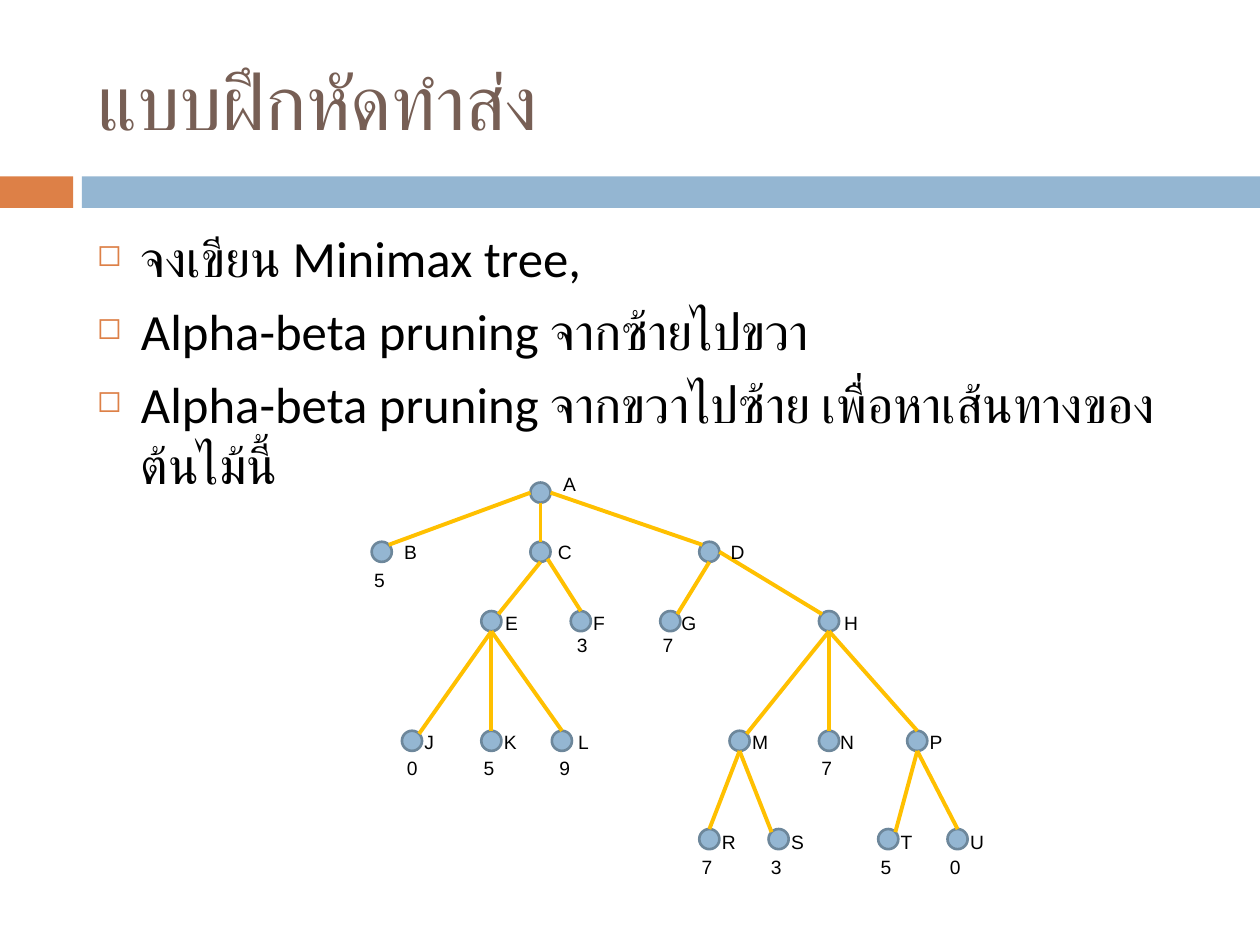
from lxml.etree import SubElement
from pptx import Presentation
from pptx.dml.color import RGBColor
from pptx.enum.shapes import MSO_CONNECTOR as Line, MSO_SHAPE as Shape
from pptx.enum.text import MSO_ANCHOR as Anchor, PP_ALIGN as Align
from pptx.oxml.ns import qn
from pptx.util import Inches, Pt

HEADING = "แบบฝึกหัดทำส่ง"
TASKS = [
    "จงเขียน Minimax tree,",
    "Alpha-beta pruning จากซ้ายไปขวา",
    "Alpha-beta pruning จากขวาไปซ้าย เพื่อหาเส้นทางของต้นไม้นี้",
]
# level: node top, name top, value top
LEVELS = [
    (3.83, 3.70, None),
    (4.30, 4.24, 4.46),
    (4.85, 4.80, 4.98),
    (5.80, 5.75, 5.95),
    (6.58, 6.54, 6.74),
]
# name, left, level, name offset, value, value offset
NODES = [
    ("A", 4.21, 0, 0.16, None, 0),
    ("B", 2.95, 1, 0.16, "5", -0.08),
    ("C", 4.21, 1, 0.12, None, 0),
    ("D", 5.55, 1, 0.15, None, 0),
    ("E", 3.82, 2, 0.09, None, 0),
    ("F", 4.53, 2, 0.08, "3", -0.05),
    ("G", 5.24, 2, 0.07, "7", -0.08),
    ("H", 6.50, 2, 0.10, None, 0),
    ("J", 3.19, 3, 0.08, "0", -0.06),
    ("K", 3.82, 3, 0.08, "5", -0.08),
    ("L", 4.38, 3, 0.11, "9", -0.04),
    ("M", 5.79, 3, 0.08, None, 0),
    ("N", 6.50, 3, 0.07, "7", -0.08),
    ("P", 7.20, 3, 0.08, None, 0),
    ("R", 5.55, 4, 0.08, "7", -0.08),
    ("S", 6.10, 4, 0.08, "3", -0.08),
    ("T", 6.97, 4, 0.08, "5", -0.08),
    ("U", 7.52, 4, 0.08, "0", -0.08),
]
BRANCHES = [
    ("A", "left", "B", "top right"),
    ("A", "bottom", "C", "top"),
    ("A", "right", "D", "top left"),
    ("D", "bottom", "G", "top right"),
    ("D", "right", "H", "top left"),
    ("H", "bottom", "M", "top right"),
    ("H", "bottom", "N", "top"),
    ("H", "bottom", "P", "top"),
    ("P", "bottom", "T", "top right"),
    ("P", "bottom", "U", "top"),
    ("M", "bottom", "R", "top"),
    ("M", "bottom", "S", "top left"),
    ("C", "bottom right", "F", "top"),
    ("C", "bottom", "E", "top right"),
    ("E", "bottom", "J", "top right"),
    ("E", "bottom", "K", "top"),
    ("E", "bottom", "L", "top"),
]
SITES = {
    "top": (0.5, 0), "bottom": (0.5, 1), "left": (0, 0.5), "right": (1, 0.5),
    "top left": (0.15, 0.15), "top right": (0.85, 0.15), "bottom right": (0.85, 0.85),
}
NODE_SIZE = 0.16
THEME = {
    "orange": RGBColor.from_string("DD8047"),
    "blue": RGBColor.from_string("94B6D2"),
    "outline": RGBColor.from_string("6D879B"),
    "branch": RGBColor.from_string("FFC000"),
    "heading": {"name": "Calibri", "size": Pt(44), "color": RGBColor.from_string("775F55")},
    "task": {"name": "Calibri", "size": Pt(29), "color": RGBColor(0, 0, 0)},
    "label": {"name": "Arial", "size": Pt(11), "color": RGBColor(0, 0, 0)},
}


def inches(*lengths):
    return [Inches(length) for length in lengths]


def write(paragraph, words, style):
    run = paragraph.add_run()
    run.text = words
    for key, setting in style.items():
        if key == "color":
            run.font.color.rgb = setting
        else:
            setattr(run.font, key, setting)
    SubElement(run.font._element, qn("a:cs"), typeface=style["name"])


def add_filled(slide, preset, box, fill, outline=None):
    figure = slide.shapes.add_shape(preset, *inches(*box))
    figure.shadow.inherit = False
    figure.fill.solid()
    figure.fill.fore_color.rgb = fill
    if outline is None:
        figure.line.fill.background()
    else:
        figure.line.color.rgb = outline
        figure.line.width = Pt(1.5)
    return figure


def add_label(slide, left, top, words):
    frame = slide.shapes.add_textbox(*inches(left, top, 0.39, 0.29)).text_frame
    frame.word_wrap = True
    write(frame.paragraphs[0], words, THEME["label"])


def add_heading(slide):
    heading = slide.shapes.title
    place = zip(("left", "top", "width", "height"), inches(0.67, 0.25, 8.92, 1.08))
    for side, length in place:
        setattr(heading, side, length)
    heading.text_frame.vertical_anchor = Anchor.MIDDLE
    paragraph = heading.text_frame.paragraphs[0]
    paragraph.alignment = Align.LEFT
    write(paragraph, HEADING, THEME["heading"])


def add_tasks(slide):
    frame = slide.shapes.add_textbox(*inches(0.67, 1.75, 8.92, 4.92)).text_frame
    frame.word_wrap = True
    for index, task in enumerate(TASKS):
        paragraph = frame.add_paragraph() if index else frame.paragraphs[0]
        paragraph.space_before = Pt(7)
        write(paragraph, task, THEME["task"])
        props = paragraph._p.get_or_add_pPr()
        props.set("marL", str(Inches(0.35)))
        props.set("indent", str(-Inches(0.35)))
        tint = SubElement(props, qn("a:buClr"))
        SubElement(tint, qn("a:srgbClr"), val=str(THEME["orange"]))
        SubElement(props, qn("a:buSzPct"), val="60000")
        SubElement(props, qn("a:buChar"), char="◻")


def site_point(node, site):
    across, down = SITES[site]
    return int(node.left + across * node.width), int(node.top + down * node.height)


def add_tree(slide):
    nodes = {}
    for name, left, level, *_ in NODES:
        box = (left, LEVELS[level][0], NODE_SIZE, NODE_SIZE)
        nodes[name] = add_filled(slide, Shape.OVAL, box, THEME["blue"], THEME["outline"])
    for parent, start, child, end in BRANCHES:
        ends = site_point(nodes[parent], start) + site_point(nodes[child], end)
        branch = slide.shapes.add_connector(Line.STRAIGHT, *ends)
        if end == "top":
            branch.end_connect(nodes[child], 0)
        branch.line.color.rgb = THEME["branch"]
        branch.line.width = Pt(2.25)
        SubElement(branch._element.spPr, qn("a:effectLst"))
    for name, left, level, name_offset, value, value_offset in NODES:
        _, name_top, value_top = LEVELS[level]
        add_label(slide, left + name_offset, name_top, name)
        if value is not None:
            add_label(slide, left + value_offset, value_top, value)


def main():
    deck = Presentation()
    deck.slide_width, deck.slide_height = inches(10, 7.5)
    slide = deck.slides.add_slide(deck.slide_layouts[5])
    add_filled(slide, Shape.RECTANGLE, (0, 1.4, 0.58, 0.25), THEME["orange"])
    add_filled(slide, Shape.RECTANGLE, (0.65, 1.4, 9.35, 0.25), THEME["blue"])
    add_heading(slide)
    add_tasks(slide)
    add_tree(slide)
    deck.save("out.pptx")


if __name__ == "__main__":
    main()
